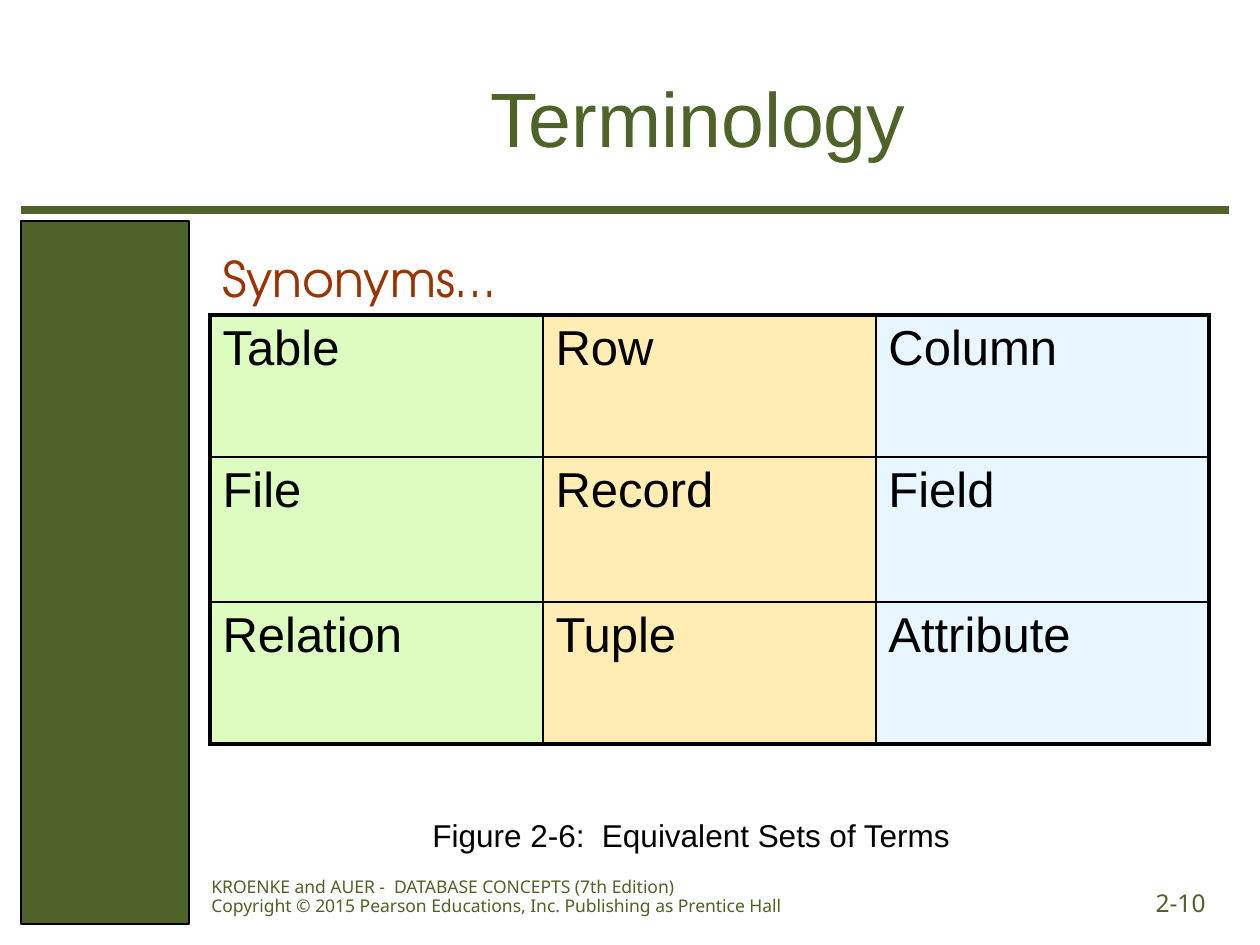
import pptx
import pptx.util
import pptx.dml.color
import pptx.enum.shapes
import pptx.enum.text
import pptx.oxml
import pptx.oxml.ns

RGB = pptx.dml.color.RGBColor
ALIGN = pptx.enum.text.PP_ALIGN
ANCHOR = pptx.enum.text.MSO_ANCHOR
OLIVE = RGB(0x4F, 0x62, 0x28)
BLACK = RGB(0, 0, 0)
RUST = RGB(0x99, 0x33, 0x00)
GREEN = RGB(0xDD, 0xFC, 0xC0)
AMBER = RGB(0xFF, 0xED, 0xB3)
SKY = RGB(0xE7, 0xF6, 0xFF)

SCALE = 914400 / 126
TERMS = [
    ["Table", "Row", "Column"],
    ["File", "Record", "Field"],
    ["Relation", "Tuple", "Attribute"],
]
TINTS = [GREEN, AMBER, SKY]
ROWS = [142, 145, 142]


def px(*nums):
    return [pptx.util.Emu(round(n * SCALE)) for n in nums]


def style(frame, size, face, color, align=ALIGN.LEFT):
    for para in frame.paragraphs:
        para.alignment = align
        for run in para.runs:
            run.font.size = pptx.util.Pt(size)
            run.font.name = face
            run.font.color.rgb = color


def label(slide, box, text, size, face, color, align=ALIGN.LEFT, wrap=True):
    frame = slide.shapes.add_textbox(*px(*box)).text_frame
    frame.word_wrap = wrap
    frame.text = text
    style(frame, size, face, color, align)
    return frame


def frame_art(slide, box):
    left, top, width, height = box
    bar = slide.shapes.add_shape(
        pptx.enum.shapes.MSO_SHAPE.RECTANGLE, *px(left, top + 11, 168, height - 11))
    bar.shadow.inherit = False
    bar.fill.solid()
    bar.fill.fore_color.rgb = OLIVE
    bar.line.color.rgb = BLACK
    bar.line.width = pptx.util.Pt(0.75)
    rule = slide.shapes.add_connector(
        pptx.enum.shapes.MSO_CONNECTOR.STRAIGHT, *px(left, top, left + width, top))
    rule.line.color.rgb = OLIVE
    rule.line.width = pptx.util.Pt(5)
    pptx.oxml.ns.qn("a:effectLst")
    rule._element.spPr.append(pptx.oxml.parse_xml(
        f'<a:effectLst {pptx.oxml.ns.nsdecls("a")}/>'))


def heading(slide, box):
    title = slide.shapes.title
    title.left, title.top, title.width, title.height = px(*box)
    frame = title.text_frame
    frame.text = "Terminology"
    frame.vertical_anchor = ANCHOR.MIDDLE
    style(frame, 44, "Arial", OLIVE, ALIGN.CENTER)


def edge(cell, side, width):
    cell._tc.get_or_add_tcPr().append(pptx.oxml.parse_xml(
        f'<a:ln{side} {pptx.oxml.ns.nsdecls("a")} w="{pptx.util.Pt(width)}">'
        f'<a:solidFill><a:srgbClr val="{BLACK}"/></a:solidFill></a:ln{side}>'))


def terms(slide, box):
    last = len(TERMS) - 1
    grid = slide.shapes.add_table(len(TERMS), len(TINTS), *px(*box)).table
    grid.first_row = False
    grid.horz_banding = False
    for col in grid.columns:
        col.width = px(box[2] / len(TINTS))[0]
    for r, words in enumerate(TERMS):
        grid.rows[r].height = px(ROWS[r])[0]
        for c, word in enumerate(words):
            cell = grid.cell(r, c)
            outer = {"L": c == 0, "R": c == last, "T": r == 0, "B": r == last}
            for side, thick in outer.items():
                edge(cell, side, 2.25 if thick else 1)
            cell.fill.solid()
            cell.fill.fore_color.rgb = TINTS[c]
            cell.text_frame.text = word
            style(cell.text_frame, 28, "Arial", BLACK)


def footer(slide, box):
    left, top, width, height = box
    note = label(
        slide, (left, top, 714, height),
        "KROENKE and AUER -  DATABASE CONCEPTS (7th Edition)\v"
        "Copyright © 2015 Pearson Educations, Inc. Publishing as Prentice Hall",
        10, "Noto Sans", OLIVE)
    note.paragraphs[0].line_spacing = 0.9
    label(slide, (left + width - 137, top + 10, 137, 44),
          "2-10", 14, "Noto Sans", OLIVE, ALIGN.RIGHT)


def main():
    deck = pptx.Presentation()
    deck.slide_width, deck.slide_height = px(1260, 945)
    slide = deck.slides.add_slide(deck.slide_layouts[5])
    frame_art(slide, (21, 210, 1208, 714))
    heading(slide, (199, 38, 998, 158))
    terms(slide, (210, 315, 999, sum(ROWS)))
    label(slide, (210, 242, 319, 72), "Synonyms…", 28,
          "TeX Gyre Adventor", RUST, wrap=False)
    label(slide, (420, 810, 630, 50),
          "Figure 2-6:  Equivalent Sets of Terms", 18, "Arial", BLACK)
    footer(slide, (199, 872, 1019, 55))
    deck.save("out.pptx")


if __name__ == "__main__":
    main()
